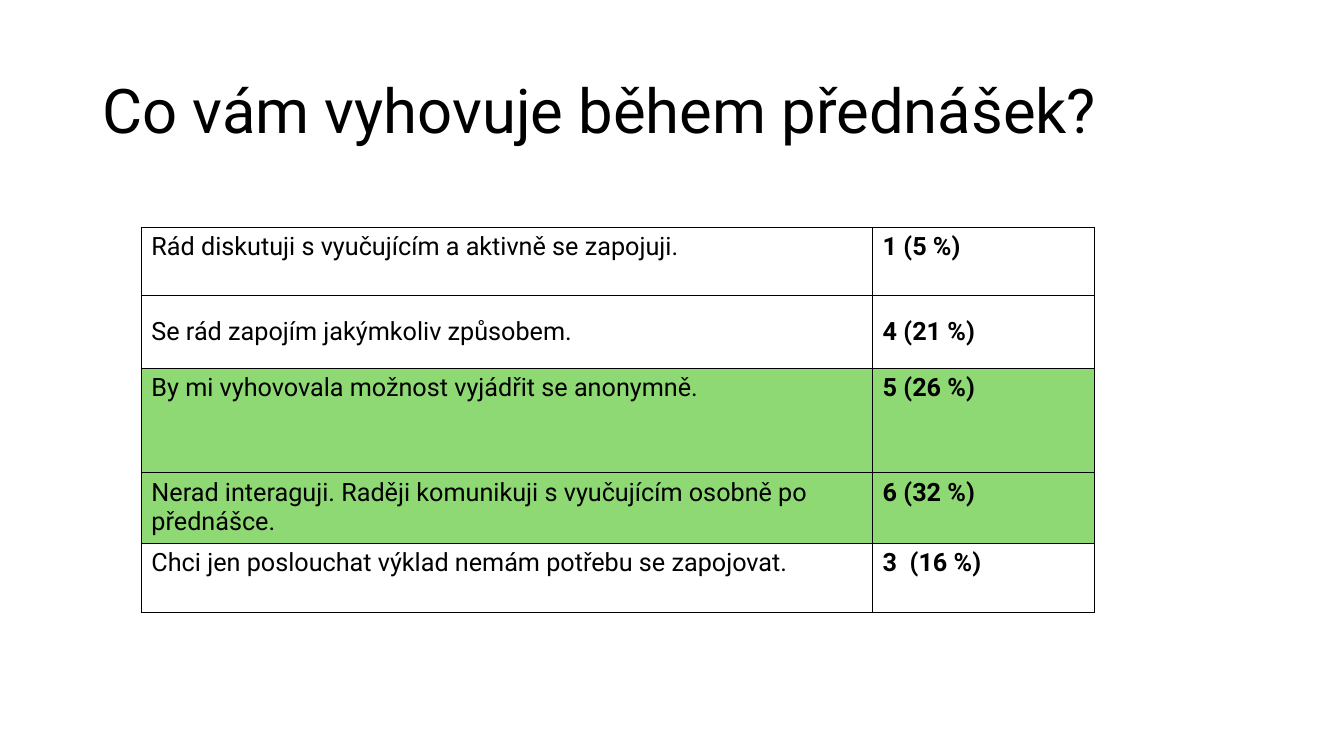
from dataclasses import dataclass

from lxml import etree
from pptx import Presentation
from pptx.dml.color import RGBColor
from pptx.enum.text import MSO_ANCHOR
from pptx.oxml.ns import qn
from pptx.util import Pt

TOP = MSO_ANCHOR.TOP
MIDDLE = MSO_ANCHOR.MIDDLE


@dataclass(frozen=True)
class Theme:
    """Colours, font and type sizes of the slide."""
    font: str = "Roboto"
    text: str = "000000"
    border: str = "000000"
    plain: str = "FFFFFF"
    highlight: str = "8ED973"
    title_size: float = 44
    table_size: float = 18
    border_width: float = 1


THEME = Theme()
TITLE = "Co vám vyhovuje během přednášek?"
TITLE_BOX = (66, 28.8, 828, 104.4)
TABLE_BOX = (101, 162.5, 681, 274.5)
ANSWER_SHARE = 0.767
ANSWERS = [
    ("Rád diskutuji s vyučujícím a aktivně se zapojuji.", "1 (5 %)", 48.6, THEME.plain, TOP),
    ("Se rád zapojím jakýmkoliv způsobem.", "4 (21 %)", 52.2, THEME.plain, MIDDLE),
    ("By mi vyhovovala možnost vyjádřit se anonymně.", "5 (26 %)", 74.4, THEME.highlight, TOP),
    ("Nerad interaguji. Raději komunikuji s vyučujícím osobně po přednášce.", "6 (32 %)",
     49.2, THEME.highlight, TOP),
    ("Chci jen poslouchat výklad nemám potřebu se zapojovat.", "3  (16 %)", 49.2, THEME.plain, TOP),
]


def add_run(paragraph, text, size, bold=False):
    """Add one run in the theme font and colour."""
    run = paragraph.add_run()
    run.text = text
    run.font.name = THEME.font
    run.font.size = Pt(size)
    run.font.bold = bold
    run.font.color.rgb = RGBColor.from_string(THEME.text)


def add_borders(cell):
    """Draw a solid line on all four sides of a cell."""
    properties = cell._tc.get_or_add_tcPr()
    for position, side in enumerate(("lnL", "lnR", "lnT", "lnB")):
        line = etree.Element(qn(f"a:{side}"), w=str(Pt(THEME.border_width)))
        fill = etree.SubElement(line, qn("a:solidFill"))
        etree.SubElement(fill, qn("a:srgbClr"), val=THEME.border)
        properties.insert(position, line)


def add_title(slide, box):
    """Place the question in the given box."""
    frame = slide.shapes.add_textbox(*map(Pt, box)).text_frame
    frame.word_wrap = True
    frame.vertical_anchor = MIDDLE
    paragraph = frame.paragraphs[0]
    paragraph.line_spacing = 0.9
    add_run(paragraph, TITLE, THEME.title_size)


def add_answer_table(slide, box):
    """Place the answers and their counts in the given box."""
    table = slide.shapes.add_table(len(ANSWERS), 2, *map(Pt, box)).table
    table.first_row = False
    table.horz_banding = False
    width = box[2]
    table.columns[0].width = Pt(width * ANSWER_SHARE)
    table.columns[1].width = Pt(width * (1 - ANSWER_SHARE))
    for row, (answer, count, height, fill, anchor) in zip(table.rows, ANSWERS):
        row.height = Pt(height)
        for cell, text, bold in zip(row.cells, (answer, count), (False, True)):
            cell.vertical_anchor = anchor
            cell.fill.solid()
            cell.fill.fore_color.rgb = RGBColor.from_string(fill)
            add_run(cell.text_frame.paragraphs[0], text, THEME.table_size, bold)
            add_borders(cell)


def main():
    """Build and save the presentation."""
    presentation = Presentation()
    presentation.slide_width = Pt(960)
    presentation.slide_height = Pt(540)
    slide = presentation.slides.add_slide(presentation.slide_layouts[6])
    add_title(slide, TITLE_BOX)
    add_answer_table(slide, TABLE_BOX)
    presentation.save("out.pptx")


if __name__ == "__main__":
    main()
